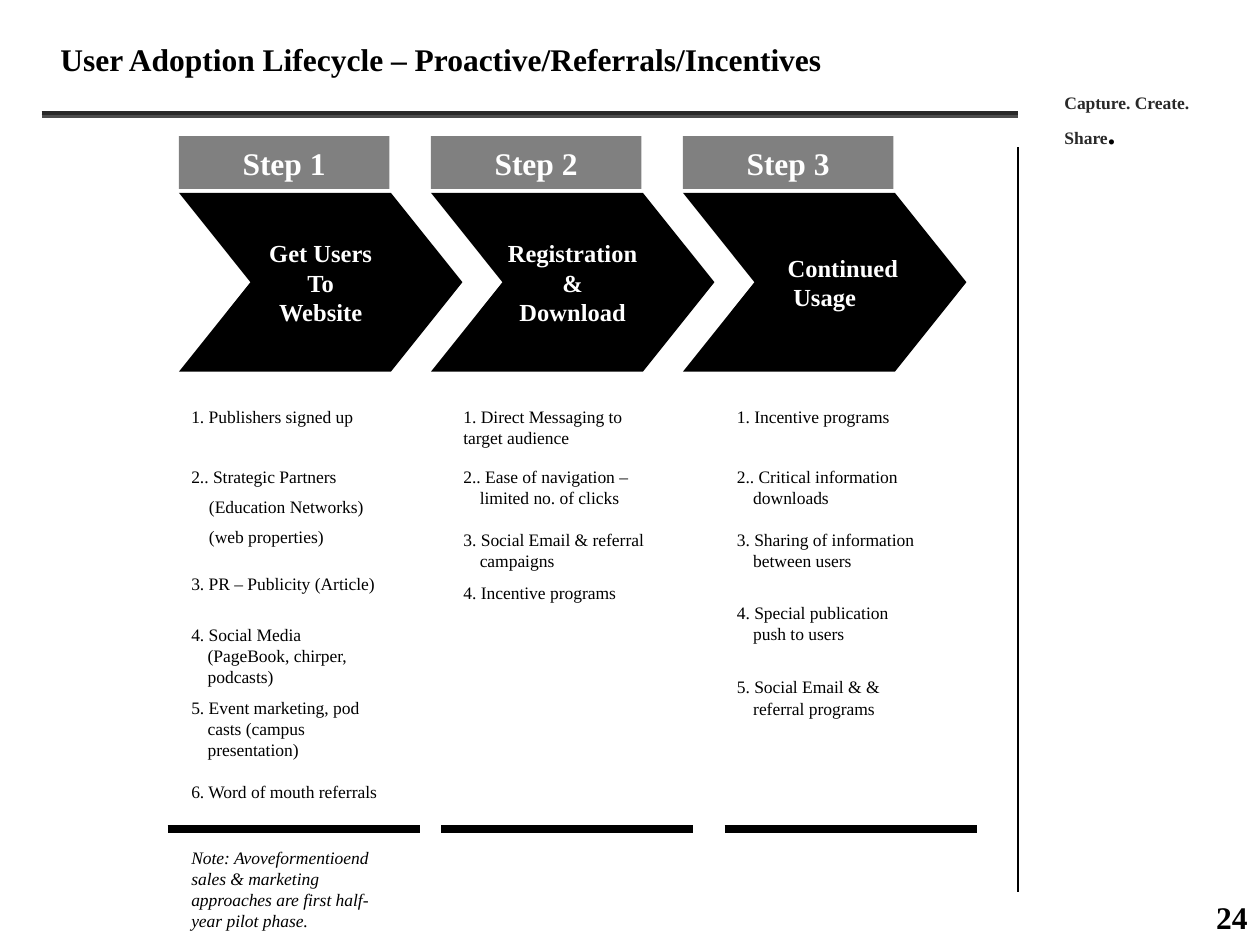
from pptx import Presentation
from pptx.dml.color import RGBColor
from pptx.enum.shapes import MSO_CONNECTOR, MSO_SHAPE
from pptx.enum.text import MSO_ANCHOR, PP_ALIGN
from pptx.oxml.ns import qn
from pptx.util import Inches, Pt
from lxml.etree import SubElement

BLACK = RGBColor(0x00, 0x00, 0x00)
WHITE = RGBColor(0xFF, 0xFF, 0xFF)
CHARCOAL = RGBColor(0x29, 0x29, 0x29)
DARK_GRAY = RGBColor(0x4D, 0x4D, 0x4D)
GRAY = RGBColor(0x80, 0x80, 0x80)

STEPS = [
    ("Step 1", ["Get Users", "To", "Website"]),
    ("Step 2", ["Registration", "&", "Download"]),
    ("Step 3", ["Continued", "Usage"]),
]
COLUMNS = [
    (1.42, 1.33, [
        (3.17, ["1. Publishers signed up"]),
        (3.65, ["2.. Strategic Partners", "(Education Networks)", "(web properties)"]),
        (4.5, ["3. PR – Publicity (Article)"]),
        (4.9, ["4. Social Media (PageBook, chirper, podcasts)"]),
        (5.48, ["5. Event marketing, pod casts (campus presentation)"]),
        (6.15, ["6. Word of mouth referrals"]),
    ]),
    (3.58, 3.5, [
        (3.17, ["1. Direct Messaging to target audience"]),
        (3.65, ["2.. Ease of navigation – limited no. of clicks"]),
        (4.15, ["3. Social Email & referral campaigns"]),
        (4.57, ["4. Incentive programs"]),
    ]),
    (5.75, 5.75, [
        (3.17, ["1. Incentive programs"]),
        (3.65, ["2.. Critical information downloads"]),
        (4.15, ["3. Sharing of information between users"]),
        (4.73, ["4. Special publication push to users"]),
        (5.32, ["5. Social Email & & referral programs"]),
    ]),
]


class SlideBuilder:
    font = "Times New Roman"

    def __init__(self, slide):
        self.slide = slide

    def fill_text(self, tf, lines, size, color=BLACK, bold=False, italic=False, align=PP_ALIGN.LEFT):
        tf.text = "\n".join(lines)
        for p in tf.paragraphs:
            p.alignment = align
            for r in p.runs:
                self.style(r, size, color, bold, italic)
        return tf

    def style(self, r, size, color, bold=False, italic=False):
        r.font.name = self.font
        r.font.size = Pt(size)
        r.font.color.rgb = color
        r.font.bold = bold
        r.font.italic = italic

    def title(self, text, x, y, w, h):
        sp = self.slide.shapes.title
        sp.left, sp.top, sp.width, sp.height = map(Inches, (x, y, w, h))
        sp.text_frame.vertical_anchor = MSO_ANCHOR.TOP
        self.fill_text(sp.text_frame, [text], 18, bold=True)

    def text(self, lines, x, y, w, h, size=10, **style):
        tf = self.slide.shapes.add_textbox(*map(Inches, (x, y, w, h))).text_frame
        tf.word_wrap = True
        return self.fill_text(tf, lines, size, **style)

    def item(self, lines, x, y, hanging):
        tf = self.text(lines, x, y, 1.67, 0.18 * len(lines) + 0.25)
        if hanging:
            pPr = tf.paragraphs[0]._p.get_or_add_pPr()
            pPr.set("marL", str(Inches(0.13)))
            pPr.set("indent", str(-Inches(0.13)))
        for p in tf.paragraphs[1:]:
            p.space_before = Pt(5)
            p._p.get_or_add_pPr().set("marL", str(Inches(0.14)))

    def shape(self, kind, lines, x, y, w, h, fill, size):
        sp = self.slide.shapes.add_shape(kind, *map(Inches, (x, y, w, h)))
        sp.shadow.inherit = False
        sp.fill.solid()
        sp.fill.fore_color.rgb = fill
        sp.line.fill.background()
        tf = sp.text_frame
        tf.word_wrap = False
        tf.vertical_anchor = MSO_ANCHOR.MIDDLE
        self.fill_text(tf, lines, size, WHITE, bold=True, align=PP_ALIGN.CENTER)
        return sp

    def line(self, x1, y1, x2, y2, color, width):
        ln = self.slide.shapes.add_connector(MSO_CONNECTOR.STRAIGHT, *map(Inches, (x1, y1, x2, y2)))
        ln.line.color.rgb = color
        ln.line.width = Pt(width)
        SubElement(ln._element.spPr, qn("a:effectLst"))


def main():
    prs = Presentation()
    prs.slide_width, prs.slide_height = Inches(10), Inches(7.5)
    s = SlideBuilder(prs.slides.add_slide(prs.slide_layouts[5]))

    s.line(0.33, 0.92, 8.08, 0.92, DARK_GRAY, 2.25)
    s.line(0.33, 0.9, 8.08, 0.9, CHARCOAL, 2.25)
    s.line(8.08, 1.17, 8.08, 7.08, BLACK, 0.75)
    s.title("User Adoption Lifecycle – Proactive/Referrals/Incentives", 0.38, 0.27, 7.03, 0.4)

    tagline = s.text(["Capture. Create. Share"], 8.35, 0.68, 1.4, 0.55, color=CHARCOAL, bold=True)
    r = tagline.paragraphs[0].add_run()
    r.text = "."
    s.style(r, 18, BLACK, bold=True)

    for i, (step, goal) in enumerate(STEPS):
        x = 1.42 + 2 * i
        s.shape(MSO_SHAPE.RECTANGLE, [step], x, 1.08, 1.67, 0.42, GRAY, 18)
        chevron = s.shape(MSO_SHAPE.CHEVRON, goal, x, 1.53, 2.25, 1.42, BLACK, 14)
        chevron.adjustments[0] = 0.4
    continued = chevron.text_frame.paragraphs[0]
    continued._p.get_or_add_pPr().set("marL", str(Inches(0.29)))

    for x, rule_x, items in COLUMNS:
        for i, (y, lines) in enumerate(items):
            s.item(lines, x, y, hanging=i > 0 and len(lines) == 1)
        s.line(rule_x, 6.58, rule_x + 2, 6.58, BLACK, 4.5)

    s.text(["Note: Avoveformentioend sales & marketing approaches are first half-year pilot phase."],
           1.42, 6.67, 1.67, 0.6, italic=True)
    s.text(["24"], 9.5, 7.08, 0.5, 0.4, size=18, bold=True, align=PP_ALIGN.RIGHT)
    prs.save("out.pptx")


if __name__ == "__main__":
    main()
